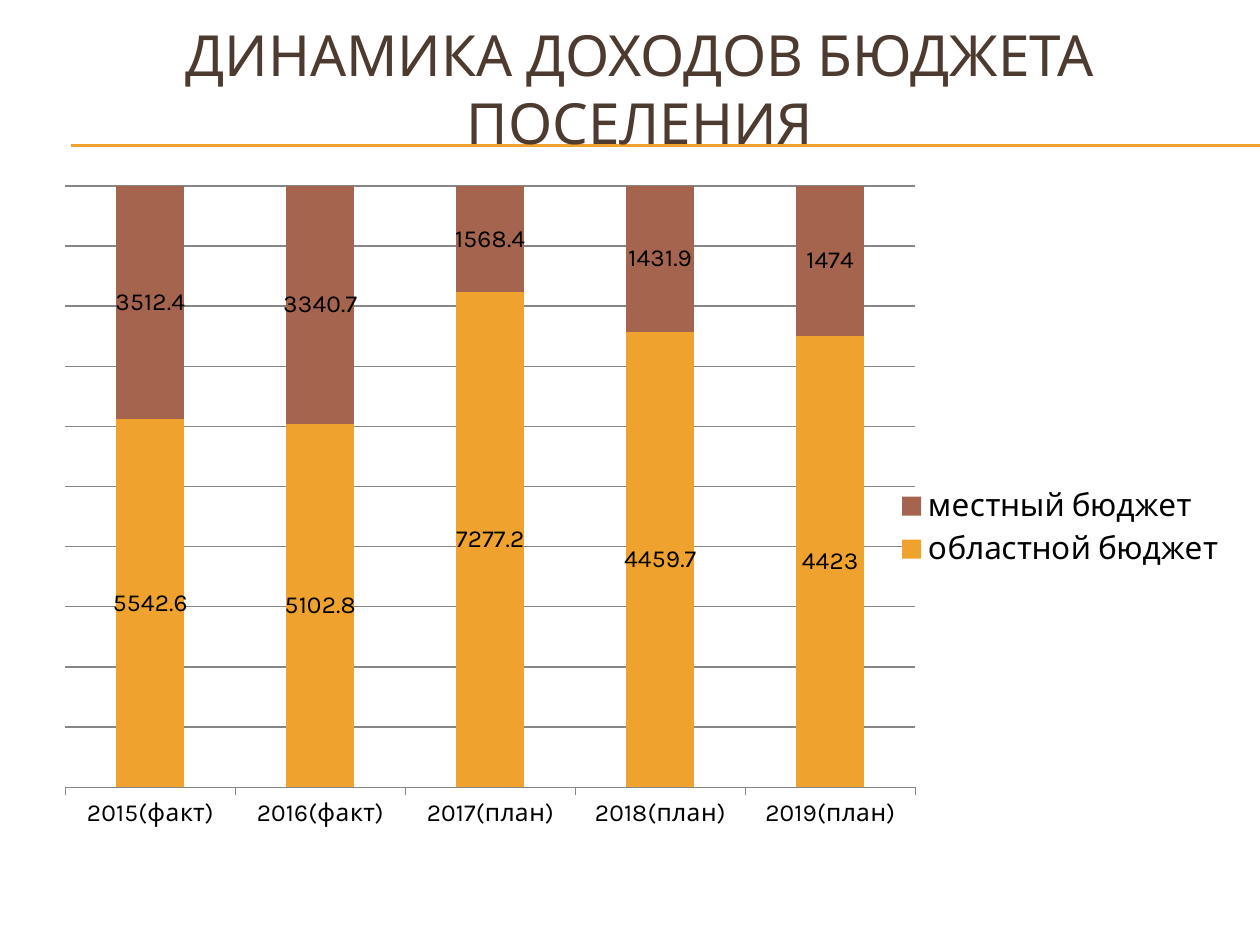
from lxml import etree
from pptx import Presentation
from pptx.chart.data import CategoryChartData
from pptx.dml.color import RGBColor
from pptx.enum import chart as ch, shapes, text
from pptx.oxml import parse_xml
from pptx.oxml.ns import nsdecls, qn
from pptx.util import Inches, Pt

ORANGE = RGBColor(0xF0, 0xA2, 0x2E)
RUST = RGBColor(0xA5, 0x64, 0x4E)
BROWN = RGBColor(0x4E, 0x3B, 0x30)
GREY = RGBColor(0x86, 0x86, 0x86)
BLACK = RGBColor(0, 0, 0)
FONT = "Karla"

TITLE = "ДИНАМИКА ДОХОДОВ БЮДЖЕТА ПОСЕЛЕНИЯ"
YEARS = ["2015(факт)", "2016(факт)", "2017(план)", "2018(план)", "2019(план)"]
BUDGETS = [
    ("областной бюджет", ORANGE, [5542.6, 5102.8, 7277.2, 4459.7, 4423]),
    ("местный бюджет", RUST, [3512.4, 3340.7, 1568.4, 1431.9, 1474]),
]
LEFT, WIDTH = Inches(0.33), Inches(9.5)
RULE_HEIGHTS = (1.15, 1.16)
PLOT_AREA = {"x": 0.02, "y": 0, "w": 0.71, "h": 0.88}  # shares of the chart


def style_font(font, size, color=BLACK):
    for name, value in {"name": FONT, "size": Pt(size), "bold": False}.items():
        setattr(font, name, value)
    font.color.rgb = color


def add_rule(slide, y):
    rule = slide.shapes.add_connector(
        shapes.MSO_CONNECTOR.STRAIGHT, Inches(0.56), Inches(y), Inches(10), Inches(y))
    rule.line.color.rgb = ORANGE
    rule.line.width = Pt(0.75)
    etree.SubElement(rule._element.spPr, qn("a:effectLst"))


def add_title(slide):
    frame = slide.shapes.add_textbox(LEFT, Inches(0.5), WIDTH, Inches(0.92)).text_frame
    frame.word_wrap = True
    frame.vertical_anchor = text.MSO_ANCHOR.MIDDLE
    frame.margin_bottom = Inches(0.58)  # lifts the heading towards the top edge
    heading = frame.paragraphs[0]
    heading.alignment = text.PP_ALIGN.CENTER
    heading.text = TITLE
    style_font(heading.runs[0].font, 32.4, BROWN)


def place_plot(chart):
    """Fix the inner plot area at its share of the chart."""
    values = "".join(f'<c:{key} val="{share}"/>' for key, share in PLOT_AREA.items())
    layout = parse_xml(
        f'<c:layout {nsdecls("c")}><c:manualLayout><c:layoutTarget val="inner"/>'
        f'<c:xMode val="edge"/><c:yMode val="edge"/>{values}</c:manualLayout></c:layout>')
    area = chart._chartSpace.chart.plotArea
    for old in area.findall(qn("c:layout")):
        area.remove(old)
    area.insert(0, layout)


def add_budget_chart(slide):
    data = CategoryChartData()
    data.categories = YEARS
    for name, _, amounts in BUDGETS:
        data.add_series(name, amounts)
    chart = slide.shapes.add_chart(
        ch.XL_CHART_TYPE.COLUMN_STACKED_100, LEFT, Inches(1.47), WIDTH, Inches(5.43), data).chart
    chart.has_title = False
    style_font(chart.font, 18)
    chart.has_legend = True
    chart.legend.position = ch.XL_LEGEND_POSITION.RIGHT
    chart.legend.include_in_layout = False

    plot = chart.plots[0]
    for name, value in {"gap_width": 150, "overlap": 100, "vary_by_categories": False}.items():
        setattr(plot, name, value)
    for series, (_, color, _) in zip(plot.series, BUDGETS):
        series.format.fill.solid()
        series.format.fill.fore_color.rgb = color
        series.data_labels.show_value = True
        style_font(series.data_labels.font, 14)

    years, shares = chart.category_axis, chart.value_axis
    years.major_tick_mark = ch.XL_TICK_MARK.OUTSIDE
    years.format.line.color.rgb = GREY
    style_font(years.tick_labels.font, 14)
    scale = {"minimum_scale": 0, "maximum_scale": 1, "major_unit": 0.1,
             "has_major_gridlines": True, "visible": False}
    for name, value in scale.items():
        setattr(shares, name, value)
    shares.major_gridlines.format.line.color.rgb = GREY
    place_plot(chart)


def main():
    deck = Presentation()
    deck.slide_width, deck.slide_height = Inches(10), Inches(7.5)
    slide = deck.slides.add_slide(deck.slide_layouts[6])
    for y in RULE_HEIGHTS:
        add_rule(slide, y)
    add_title(slide)
    add_budget_chart(slide)
    deck.save("out.pptx")


if __name__ == "__main__":
    main()
